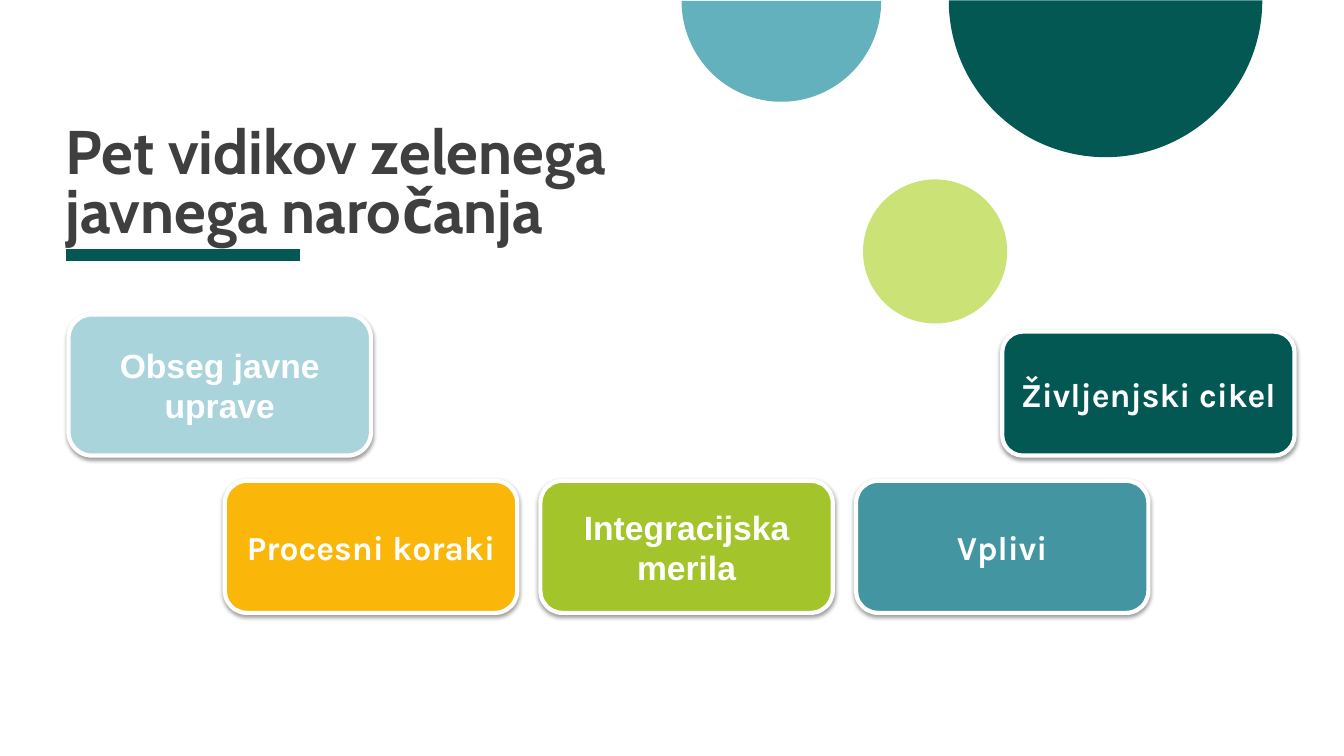
"""Build the slide on the five aspects of green public procurement."""
from dataclasses import dataclass

from lxml import etree
from pptx import Presentation
from pptx.dml.color import RGBColor
from pptx.enum.shapes import MSO_CONNECTOR, MSO_SHAPE
from pptx.enum.text import MSO_ANCHOR, PP_ALIGN
from pptx.oxml.ns import qn
from pptx.util import Inches, Pt

STRAIGHT = MSO_CONNECTOR.STRAIGHT
PIE = MSO_SHAPE.PIE
OVAL = MSO_SHAPE.OVAL
CARD = MSO_SHAPE.FLOWCHART_ALTERNATE_PROCESS
MIDDLE, BOTTOM = MSO_ANCHOR.MIDDLE, MSO_ANCHOR.BOTTOM
CENTER = PP_ALIGN.CENTER

HALF_TURN = 108
COLORS = {
    "dark_green": "035854",
    "light_teal": "64B1BE",
    "pale_lime": "CBE277",
    "lime": "A3C42A",
    "teal": "4495A2",
    "pale_blue": "A9D4DB",
    "amber": "FAB609",
    "text": "3F3F3F",
    "white": "FFFFFF",
    "black": "000000",
}


@dataclass
class Circle:
    left: float
    top: float
    width: float
    height: float
    color: str
    half: bool = False


@dataclass
class Aspect:
    text: str
    left: float
    top: float
    color: str
    font: str = "Karla"
    width: float = 2.9
    height: float = 1.31


CIRCLES = [
    Circle(9.41, -1.55, 3.11, 3.11, "dark_green", half=True),
    Circle(6.76, -0.99, 1.98, 2, "light_teal", half=True),
    Circle(8.56, 1.78, 1.43, 1.43, "pale_lime"),
]

ROW_LEFT, ROW_TOP, ROW_STEP = 2.23, 4.77, 3.13
ASPECTS = [
    Aspect("Obseg javne uprave", 0.68, 3.12, "pale_blue", "Arial", 3, 1.4),
    Aspect("Procesni koraki", ROW_LEFT, ROW_TOP, "amber"),
    Aspect("Integracijska merila", ROW_LEFT + ROW_STEP, ROW_TOP, "lime", "Arial"),
    Aspect("Vplivi", ROW_LEFT + 2 * ROW_STEP, ROW_TOP, "teal"),
    Aspect("Življenjski cikel", 9.94, 3.29, "dark_green", height=1.23),
]


def rgb(name: str) -> RGBColor:
    return RGBColor.from_string(COLORS[name])


def set_font(p, name: str, size: float, color: str) -> None:
    p.font.name = name
    p.font.size = Pt(size)
    p.font.bold = True
    p.font.color.rgb = rgb(color)


def add_filled(slide, kind, item: Circle | Aspect):
    s = slide.shapes.add_shape(kind, Inches(item.left), Inches(item.top),
                               Inches(item.width), Inches(item.height))
    s.shadow.inherit = False
    s.fill.solid()
    s.fill.fore_color.rgb = rgb(item.color)
    return s


def add_circle(slide, circle: Circle) -> None:
    s = add_filled(slide, PIE if circle.half else OVAL, circle)
    s.line.fill.background()
    if circle.half:
        s.adjustments[0] = 0
        s.adjustments[1] = HALF_TURN


def add_drop_shadow(s) -> None:
    effects = s._element.spPr.find(qn("a:effectLst"))
    shadow = etree.SubElement(effects, qn("a:outerShdw"), blurRad=str(Pt(3.1)),
                              dist=str(Pt(1.6)), dir="5400000", rotWithShape="0")
    color = etree.SubElement(shadow, qn("a:srgbClr"), val=COLORS["black"])
    etree.SubElement(color, qn("a:alpha"), val="38000")


def add_aspect(slide, aspect: Aspect) -> None:
    s = add_filled(slide, CARD, aspect)
    s.line.color.rgb = rgb("white")
    s.line.width = Pt(3)
    add_drop_shadow(s)
    tf = s.text_frame
    tf.word_wrap = True
    tf.vertical_anchor = MIDDLE
    p = tf.paragraphs[0]
    p.text = aspect.text
    p.alignment = CENTER
    set_font(p, aspect.font, 24, "white")


def add_title(slide, text: str) -> None:
    s = slide.shapes.add_textbox(Inches(0.65), Inches(1.84), Inches(6.55), Inches(0.59))
    tf = s.text_frame
    tf.word_wrap = True
    tf.vertical_anchor = BOTTOM
    tf.margin_left = tf.margin_top = tf.margin_right = tf.margin_bottom = 0
    p = tf.paragraphs[0]
    p.text = text
    p.line_spacing = 0.8
    set_font(p, "Cabin", 44, "text")


def add_underline(slide) -> None:
    s = slide.shapes.add_connector(STRAIGHT, Inches(0.65), Inches(2.53),
                                   Inches(2.98), Inches(2.53))
    s.line.color.rgb = rgb("dark_green")
    s.line.width = Pt(8)
    etree.SubElement(s._element.spPr, qn("a:effectLst"))


def main() -> None:
    prs = Presentation()
    prs.slide_width, prs.slide_height = Inches(13.33), Inches(7.5)
    slide = prs.slides.add_slide(prs.slide_layouts[6])
    add_underline(slide)
    for circle in CIRCLES:
        add_circle(slide, circle)
    add_title(slide, "Pet vidikov zelenega javnega naročanja")
    for aspect in ASPECTS:
        add_aspect(slide, aspect)
    prs.save("out.pptx")


if __name__ == "__main__":
    main()
